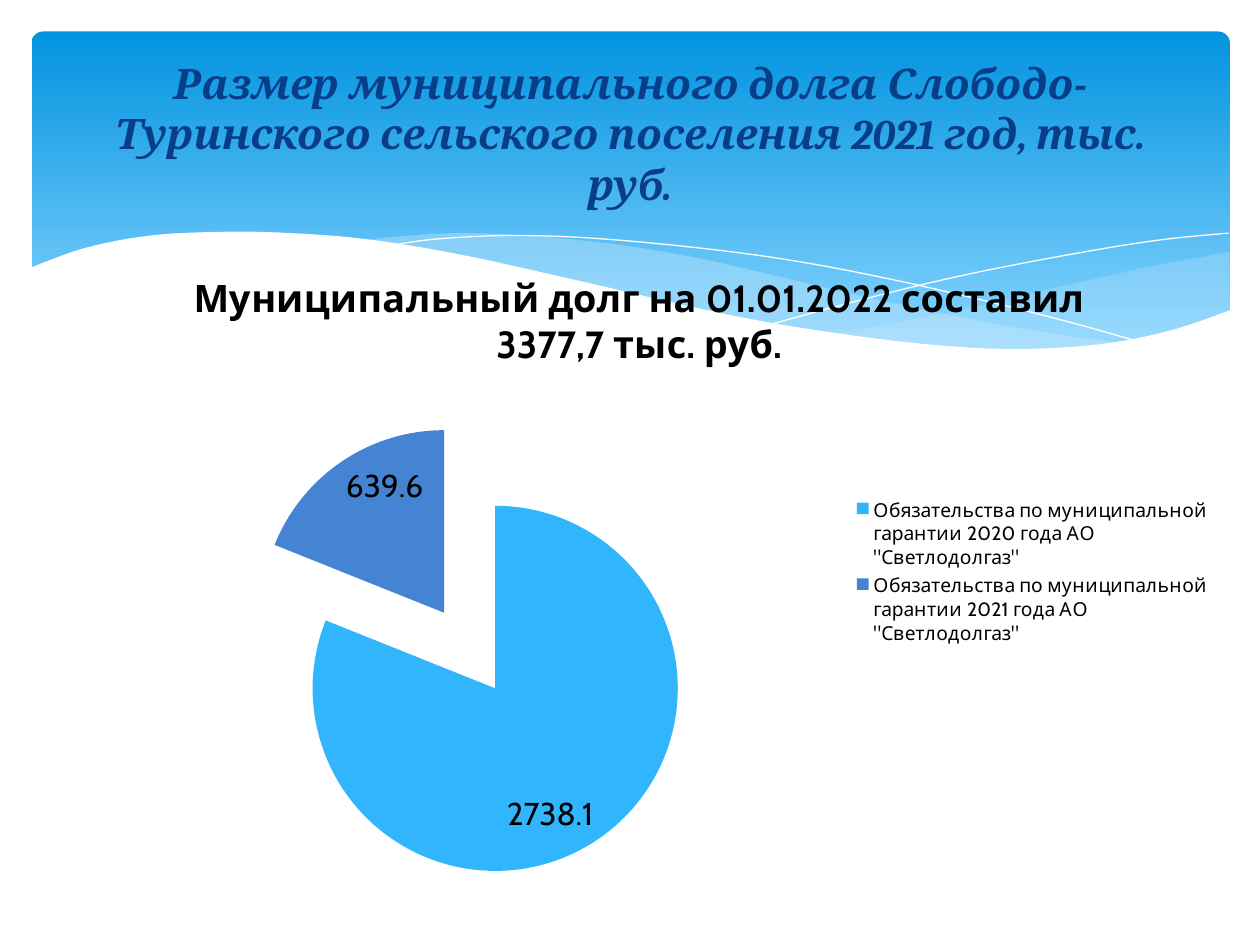
from dataclasses import dataclass

from lxml import etree
from pptx import Presentation
from pptx.chart.data import CategoryChartData
from pptx.dml.color import RGBColor
from pptx.enum.chart import XL_CHART_TYPE, XL_LABEL_POSITION, XL_LEGEND_POSITION
from pptx.enum.shapes import MSO_SHAPE
from pptx.enum.text import MSO_ANCHOR, PP_ALIGN
from pptx.oxml import parse_xml
from pptx.oxml.ns import nsdecls, qn
from pptx.util import Inches, Pt

PIE = XL_CHART_TYPE.PIE
INSIDE_END = XL_LABEL_POSITION.INSIDE_END
LEGEND_RIGHT = XL_LEGEND_POSITION.RIGHT
ROUNDED = MSO_SHAPE.ROUNDED_RECTANGLE
MIDDLE = MSO_ANCHOR.MIDDLE
CENTER = PP_ALIGN.CENTER

WHITE = RGBColor(0xFF, 0xFF, 0xFF)
BLACK = RGBColor(0x00, 0x00, 0x00)
NAVY = RGBColor(0x07, 0x3E, 0x87)
BANNER_TOP = RGBColor(0x02, 0x93, 0xE0)
BANNER_BOTTOM = RGBColor(0x83, 0xD3, 0xFE)
PALE_BLUE = RGBColor(0xC6, 0xE7, 0xFC)
SLICE_COLORS = (RGBColor(0x31, 0xB6, 0xFD), RGBColor(0x45, 0x84, 0xD3))

HEADING = "Размер муниципального долга Слободо-Туринского сельского поселения 2021 год, тыс. руб."
CHART_TITLE = "Муниципальный долг на 01.01.2022 составил 3377,7 тыс. руб."
DEBTS = {
    f'Обязательства по муниципальной гарантии {year} года АО "Светлодолгаз"': amount
    for year, amount in ((2020, 2738.1), (2021, 639.6))
}
EXPLOSION = 25
CURVE_STEPS = 6

Point = tuple[float, float]


@dataclass(frozen=True)
class Wave:
    """Smooth edges joined by straight lines; filled if opacity is set, else a line."""
    edges: tuple[tuple[Point, ...], ...]
    color: RGBColor
    opacity: int | None = None


WAVES = (
    Wave((
        ((9.76, 2), (9.21, 2.1), (8.61, 2.23), (7.53, 2.48), (6.61, 2.65)),
        ((6.61, 2.65), (7.19, 2.72), (7.69, 2.77), (8.14, 2.78), (8.63, 2.75),
         (9.05, 2.69), (9.42, 2.59), (9.76, 2.47)),
    ), PALE_BLUE, 29),
    Wave((
        ((8.93, 2.73), (8.07, 2.6), (7.06, 2.4), (6.29, 2.22), (5.55, 2.05),
         (4.89, 1.94), (4.2, 1.87), (3.61, 1.85), (3.13, 1.88), (2.86, 1.91)),
        ((2.86, 1.91), (3.62, 2.03), (4.49, 2.22), (5.3, 2.4), (6.01, 2.55),
         (6.65, 2.66), (7.22, 2.74), (7.73, 2.77), (8.18, 2.78), (8.57, 2.77), (8.93, 2.73)),
    ), PALE_BLUE, 40),
    Wave((
        ((3.09, 1.95), (3.44, 1.9), (4.01, 1.87), (4.69, 1.89), (5.56, 1.97),
         (6.36, 2.08), (7.27, 2.26), (8.31, 2.51), (9.07, 2.72)),
    ), WHITE),
    Wave((
        ((6.13, 2.57), (6.95, 2.35), (7.76, 2.16), (8.66, 1.99), (9.24, 1.9), (9.75, 1.85)),
    ), WHITE),
    Wave((
        ((9.77, 2.46), (9.3, 2.62), (8.75, 2.73), (8.09, 2.77), (7.44, 2.74),
         (6.68, 2.65), (5.79, 2.5), (4.47, 2.2), (3.65, 2.02), (2.92, 1.9),
         (2.3, 1.85), (1.77, 1.84), (1.19, 1.87), (0.67, 1.97), (0.23, 2.13)),
        ((0.23, 3.29), (9.77, 3.29)),
    ), WHITE, 100),
)


def smooth(knots: tuple[Point, ...]) -> list[Point]:
    """Sample a Catmull-Rom curve through the knots."""
    padded = (knots[0], *knots, knots[-1])
    points = [knots[0]]
    for a, b, c, d in zip(padded, padded[1:], padded[2:], padded[3:]):
        for step in range(1, CURVE_STEPS + 1):
            t = step / CURVE_STEPS
            points.append(tuple(
                q + t * (r - p) / 2 + t**2 * (2 * p - 5 * q + 4 * r - s) / 2
                + t**3 * (3 * q - p - 3 * r + s) / 2
                for p, q, r, s in zip(a, b, c, d)
            ))
    return points


def draw_wave(page, wave: Wave) -> None:
    filled = wave.opacity is not None
    points = [(Inches(x), Inches(y)) for edge in wave.edges for x, y in smooth(edge)]
    builder = page.shapes.build_freeform(*points[0])
    builder.add_line_segments(points[1:], close=filled)
    shape = builder.convert_to_shape()
    shape.shadow.inherit = False
    if not filled:
        shape.fill.background()
        shape.line.color.rgb = wave.color
        shape.line.width = Pt(0)
        return
    shape.line.fill.background()
    shape.fill.solid()
    shape.fill.fore_color.rgb = wave.color
    if wave.opacity < 100:
        color = shape.fill._xPr.find(qn("a:solidFill"))[0]
        etree.SubElement(color, qn("a:alpha")).set("val", str(wave.opacity * 1000))


def draw_banner(page) -> None:
    banner = page.shapes.add_shape(ROUNDED, Inches(0.25), Inches(0.25), Inches(9.51), Inches(2.7))
    banner.adjustments[0] = 0.034
    banner.shadow.inherit = False
    banner.line.fill.background()
    banner.fill.gradient()
    banner.fill.gradient_angle = 270
    stops = ((0, BANNER_TOP), (0.9, BANNER_BOTTOM))
    for stop, (position, color) in zip(banner.fill.gradient_stops, stops):
        stop.position = position
        stop.color.rgb = color


def set_font(font, *, name: str, size: float, color: RGBColor,
             bold: bool = False, italic: bool = False) -> None:
    font.name, font.size = name, Pt(size)
    font.bold, font.italic = bold, italic
    font.color.rgb = color


def write(frame, text: str, **font_format) -> None:
    para = frame.paragraphs[0]
    para.alignment = CENTER
    span = para.add_run()
    span.text = text
    set_font(span.font, **font_format)


def place_plot(chart, **fractions: float) -> None:
    """Fix the plot area as fractions of the chart frame."""
    modes = '<c:xMode val="edge"/><c:yMode val="edge"/>'
    values = "".join(f'<c:{key} val="{value}"/>' for key, value in fractions.items())
    area = chart._chartSpace.chart.plotArea
    for layout in area.findall(qn("c:layout")):
        area.remove(layout)
    area.insert(0, parse_xml(
        f'<c:layout {nsdecls("c")}><c:manualLayout><c:layoutTarget val="inner"/>'
        f'{modes}{values}</c:manualLayout></c:layout>'))


def draw_debt_chart(page) -> None:
    data = CategoryChartData()
    data.categories = list(DEBTS)
    data.add_series(CHART_TITLE, list(DEBTS.values()))
    chart = page.shapes.add_chart(
        PIE, Inches(0.43), Inches(1.94), Inches(9.29), Inches(5.2), data).chart
    set_font(chart.font, name="Cabin", size=18, color=BLACK)
    chart.has_title = True
    write(chart.chart_title.text_frame, CHART_TITLE,
          name="Cabin", size=21.6, color=BLACK, bold=True)
    chart.has_legend = True
    chart.legend.position = LEGEND_RIGHT
    chart.legend.include_in_layout = False
    set_font(chart.legend.font, name="Cabin", size=11, color=BLACK)
    place_plot(chart, x=0.16, y=0.27, w=0.39, h=0.7)

    plot = chart.plots[0]
    plot.vary_by_categories = True
    plot.has_data_labels = True
    labels = plot.data_labels
    labels.show_value, labels.show_percentage = True, False
    labels.position = INSIDE_END
    set_font(labels.font, name="Cabin", size=18, color=BLACK)
    series = plot.series[0]
    for index, color in enumerate(SLICE_COLORS):
        fill = series.points[index].format.fill
        fill.solid()
        fill.fore_color.rgb = color
    series._element.find(qn("c:tx")).addnext(
        parse_xml(f'<c:explosion {nsdecls("c")} val="{EXPLOSION}"/>'))


def draw_heading(page) -> None:
    box = page.shapes.add_textbox(Inches(0.5), Inches(0.37), Inches(9), Inches(1.37))
    box.text_frame.word_wrap = True
    box.text_frame.vertical_anchor = MIDDLE
    write(box.text_frame, HEADING, name="Cambria", size=24, color=NAVY, bold=True, italic=True)


def main() -> None:
    deck = Presentation()
    deck.slide_width, deck.slide_height = Inches(10), Inches(7.5)
    page = deck.slides.add_slide(deck.slide_layouts[6])
    draw_banner(page)
    for wave in WAVES:
        draw_wave(page, wave)
    draw_debt_chart(page)
    draw_heading(page)
    deck.save("out.pptx")


if __name__ == "__main__":
    main()
